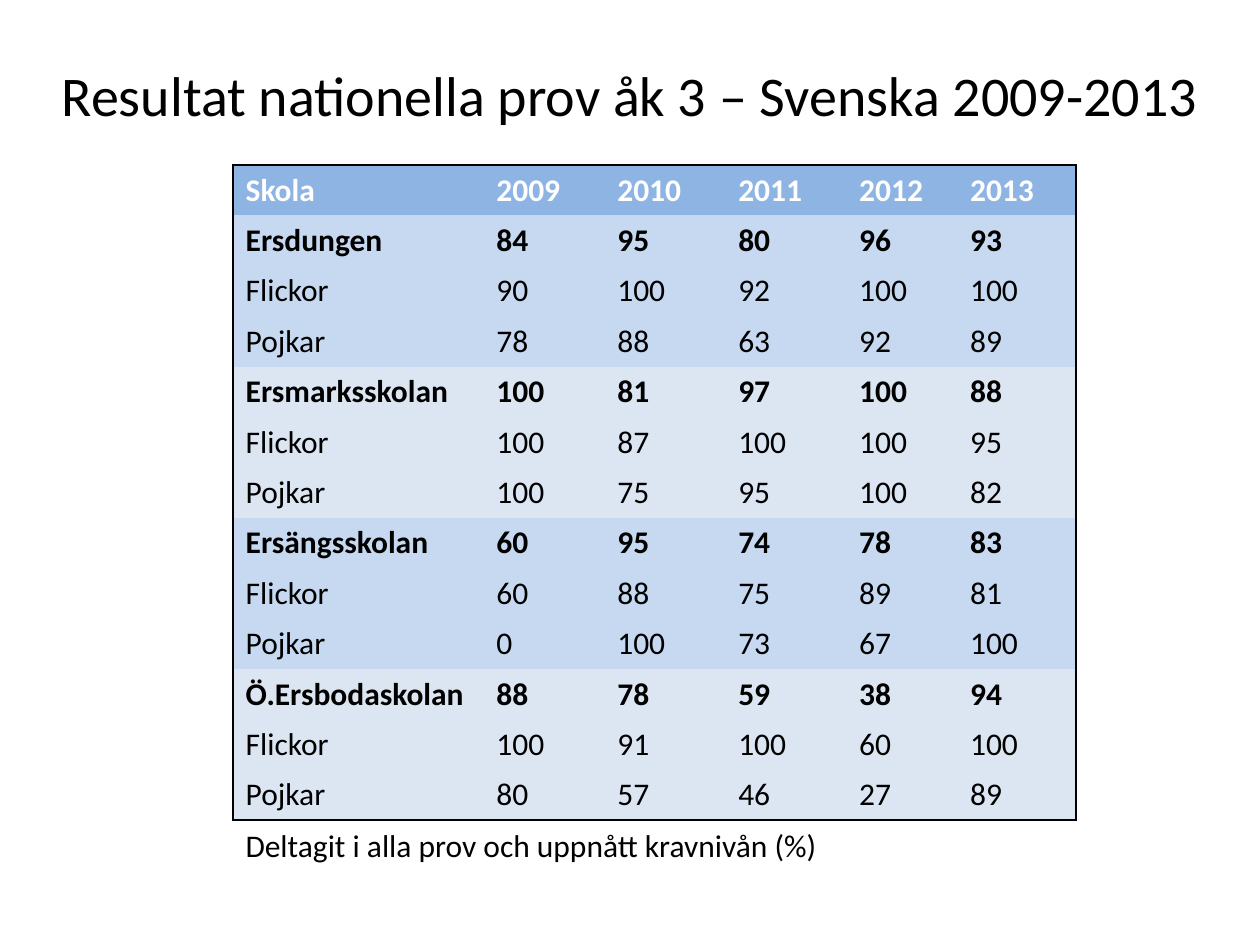
from dataclasses import dataclass

import lxml.etree
import pptx
import pptx.dml.color
import pptx.enum.text
import pptx.oxml.ns
import pptx.util

Inches = pptx.util.Inches
ALIGN = pptx.enum.text.PP_ALIGN


@dataclass(frozen=True)
class Theme:
    font: str = "Calibri"
    title_size: int = 32
    body_size: int = 18
    ink: str = "000000"
    header_ink: str = "FFFFFF"
    header_fill: str = "8EB4E3"
    group_fills: tuple = ("C6D9F1", "DCE6F2")
    frame_width: int = 1


YEARS = ["2009", "2010", "2011", "2012", "2013"]
ROW_LABELS = ["Flickor", "Pojkar"]
# Each school: total, girls, boys
SCHOOLS = {
    "Ersdungen": [(84, 95, 80, 96, 93), (90, 100, 92, 100, 100), (78, 88, 63, 92, 89)],
    "Ersmarksskolan": [(100, 81, 97, 100, 88), (100, 87, 100, 100, 95), (100, 75, 95, 100, 82)],
    "Ersängsskolan": [(60, 95, 74, 78, 83), (60, 88, 75, 89, 81), (0, 100, 73, 67, 100)],
    "Ö.Ersbodaskolan": [(88, 78, 59, 38, 94), (100, 91, 100, 60, 100), (80, 57, 46, 27, 89)],
}
COLUMN_WIDTHS = [1.99, 0.96, 0.96, 0.96, 0.88, 0.94]
ROW_HEIGHT = 0.4
TABLE_LEFT, TABLE_TOP = 1.85, 1.31


def rgb(color):
    return pptx.dml.color.RGBColor.from_string(color)


def write(frame, text, *, font, size, color, bold=False, align=ALIGN.LEFT):
    paragraph = frame.paragraphs[0]
    paragraph.alignment = align
    run = paragraph.add_run()
    run.text = text
    run.font.name = font
    run.font.size = pptx.util.Pt(size)
    run.font.bold = bold
    run.font.color.rgb = rgb(color)


def set_borders(cell, visible_sides, color, width):
    """Draw the visible sides and clear the others; call before filling the cell."""
    qn = pptx.oxml.ns.qn
    properties = cell._tc.get_or_add_tcPr()
    for side in "LRTB":
        line = lxml.etree.SubElement(properties, qn(f"a:ln{side}"), w=str(pptx.util.Pt(width)))
        if side in visible_sides:
            fill = lxml.etree.SubElement(line, qn("a:solidFill"))
            lxml.etree.SubElement(fill, qn("a:srgbClr"), val=color)
        else:
            lxml.etree.SubElement(line, qn("a:noFill"))


class SlideBuilder:
    def __init__(self, slide, theme):
        self.slide = slide
        self.theme = theme

    def text(self, text, left, top, width, height, size, align=ALIGN.LEFT):
        box = self.slide.shapes.add_textbox(
            Inches(left), Inches(top), Inches(width), Inches(height))
        box.text_frame.word_wrap = True
        write(box.text_frame, text, font=self.theme.font, size=size,
              color=self.theme.ink, align=align)

    def table(self, rows, left, top):
        """Draw rows given as (values, fill, ink, bold) inside one outer frame."""
        table = self.slide.shapes.add_table(
            len(rows), len(COLUMN_WIDTHS), Inches(left), Inches(top),
            Inches(sum(COLUMN_WIDTHS)), Inches(ROW_HEIGHT * len(rows))).table
        table.first_row = table.horz_banding = False
        for column, width in zip(table.columns, COLUMN_WIDTHS):
            column.width = Inches(width)
        last_row, last_column = len(rows) - 1, len(COLUMN_WIDTHS) - 1
        for r, (values, fill, ink, bold) in enumerate(rows):
            table.rows[r].height = Inches(ROW_HEIGHT)
            for c, value in enumerate(values):
                edges = {"L": c == 0, "R": c == last_column, "T": r == 0, "B": r == last_row}
                self.cell(table.cell(r, c), str(value), fill, ink, bold,
                          [side for side, outer in edges.items() if outer])

    def cell(self, cell, text, fill, ink, bold, sides):
        set_borders(cell, sides, self.theme.ink, self.theme.frame_width)
        cell.fill.solid()
        cell.fill.fore_color.rgb = rgb(fill)
        cell.margin_top = cell.margin_bottom = Inches(0.04)
        cell.vertical_anchor = pptx.enum.text.MSO_ANCHOR.MIDDLE
        write(cell.text_frame, text, font=self.theme.font, size=self.theme.body_size,
              color=ink, bold=bold)


def result_rows(theme):
    rows = [(["Skola", *YEARS], theme.header_fill, theme.header_ink, True)]
    for index, (school, results) in enumerate(SCHOOLS.items()):
        fill = theme.group_fills[index % len(theme.group_fills)]
        for label, scores in zip([school, *ROW_LABELS], results):
            rows.append(([label, *scores], fill, theme.ink, label == school))
    return rows


def main():
    theme = Theme()
    presentation = pptx.Presentation()
    presentation.slide_width, presentation.slide_height = Inches(10), Inches(7.5)
    slide = presentation.slides.add_slide(presentation.slide_layouts[6])
    builder = SlideBuilder(slide, theme)

    rows = result_rows(theme)
    builder.table(rows, TABLE_LEFT, TABLE_TOP)
    builder.text("Resultat nationella prov åk 3 – Svenska 2009-2013",
                 0, 0.43, 10, 0.64, theme.title_size, ALIGN.CENTER)
    builder.text("Deltagit i alla prov och uppnått kravnivån (%)",
                 TABLE_LEFT, TABLE_TOP + ROW_HEIGHT * len(rows), 6.22, 0.4, theme.body_size)
    presentation.save("out.pptx")


if __name__ == "__main__":
    main()
